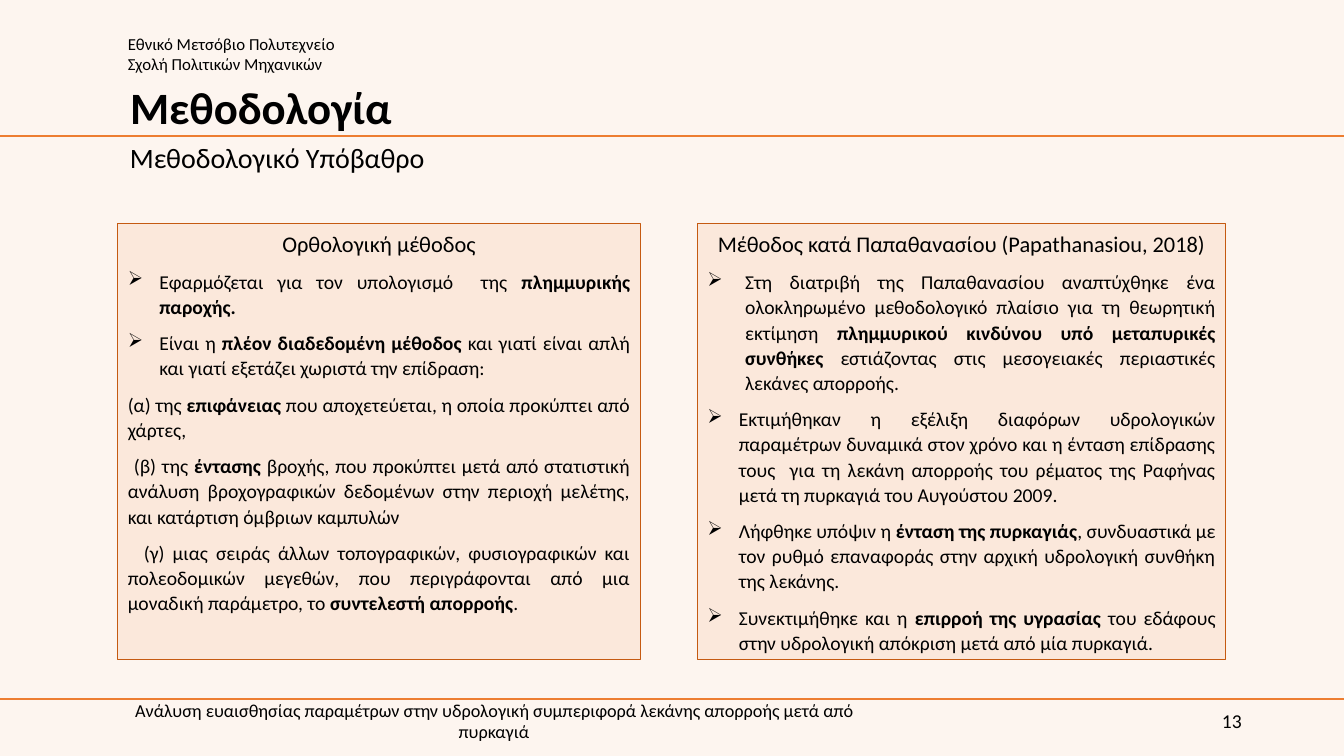
"""Build the methodology slide with its two method panels."""
from dataclasses import dataclass

from lxml.etree import SubElement
from pptx import Presentation
from pptx.dml.color import RGBColor
from pptx.enum.shapes import MSO_CONNECTOR as Connector, MSO_SHAPE as Preset
from pptx.enum.text import MSO_ANCHOR as Anchor, MSO_AUTO_SIZE as AutoSize, PP_ALIGN as Align
from pptx.oxml.ns import qn
from pptx.shapes.base import BaseShape
from pptx.slide import Slide
from pptx.text.text import TextFrame
from pptx.util import Pt

COLORS = {"background": "FDF5EF", "panel": "FBE5D6", "border": "C55A11",
          "rule": "ED7D31", "text": "000000"}
FONT = "Calibri"
SLIDE_WIDTH, SLIDE_HEIGHT = 960, 540
PANEL_OPACITY = 78
RULE_HEIGHTS = (97.2, 499)


@dataclass(frozen=True)
class Box:
    left: float
    top: float
    width: float
    height: float


@dataclass(frozen=True)
class Label:
    box: Box
    lines: tuple[str, ...]
    size: float
    align: Align = Align.LEFT
    anchor: Anchor = Anchor.TOP


@dataclass(frozen=True)
class Item:
    text: str
    bullet: bool = True
    margin: float = 22.5
    indent: float = -22.5


@dataclass(frozen=True)
class Panel:
    box: Box
    heading: str
    items: tuple[Item, ...]


TITLE_BOX = Box(85.7, 43.9, 327.6, 69.1)

LABELS = (
    Label(Box(84.2, 20.2, 311, 36),
          ("Εθνικό Μετσόβιο Πολυτεχνείο", "Σχολή Πολιτικών Μηχανικών"), 12),
    Label(Box(85.7, 96.5, 233.3, 31.7), ("Μεθοδολογικό Υπόβαθρο",), 20),
    Label(Box(64.1, 500.4, 577.4, 28.8),
          ("Ανάλυση ευαισθησίας παραμέτρων στην υδρολογική συμπεριφορά λεκάνης "
           "απορροής μετά από πυρκαγιά",), 13, Align.CENTER, Anchor.MIDDLE),
    Label(Box(678.2, 500.4, 216, 28.8), ("13",), 14, Align.RIGHT, Anchor.MIDDLE),
)

PANELS = (
    Panel(Box(84.2, 159.3, 373, 311.6), "Ορθολογική μέθοδος", (
        Item("Εφαρμόζεται για τον υπολογισμό  της **πλημμυρικής παροχής.**"),
        Item("Είναι η **πλέον διαδεδομένη μέθοδος** και γιατί είναι απλή και γιατί "
             "εξετάζει χωριστά την επίδραση:"),
        Item("(α) της **επιφάνειας** που αποχετεύεται, η οποία προκύπτει από χάρτες,",
             False, 0, 0),
        Item("(β) της **έντασης** βροχής, που προκύπτει μετά από στατιστική ανάλυση "
             "βροχογραφικών δεδομένων στην περιοχή μελέτης, και κατάρτιση όμβριων καμπυλών",
             False, 0, 4.3),
        Item("(γ) μιας σειράς άλλων τοπογραφικών, φυσιογραφικών και πολεοδομικών "
             "μεγεθών, που περιγράφονται από μια μοναδική παράμετρο, το "
             "**συντελεστή απορροής**.", False, 0, 11.5),
    )),
    Panel(Box(498.2, 159.8, 377.3, 311), "Μέθοδος κατά Παπαθανασίου (Papathanasiou, 2018)", (
        Item("Στη διατριβή της Παπαθανασίου αναπτύχθηκε ένα ολοκληρωμένο μεθοδολογικό "
             "πλαίσιο για τη θεωρητική εκτίμηση **πλημμυρικού κινδύνου υπό μεταπυρικές "
             "συνθήκες** εστιάζοντας στις μεσογειακές περιαστικές λεκάνες απορροής.",
             margin=27, indent=-27),
        Item("Εκτιμήθηκαν η εξέλιξη διαφόρων υδρολογικών παραμέτρων δυναμικά στον χρόνο "
             "και η ένταση επίδρασης τους  για τη λεκάνη απορροής του ρέματος της Ραφήνας "
             "μετά τη πυρκαγιά του Αυγούστου 2009."),
        Item("Λήφθηκε υπόψιν η **ένταση της πυρκαγιάς**, συνδυαστικά με τον ρυθμό "
             "επαναφοράς στην αρχική υδρολογική συνθήκη της λεκάνης."),
        Item("Συνεκτιμήθηκε και η **επιρροή της υγρασίας** του εδάφους στην υδρολογική "
             "απόκριση μετά από μία πυρκαγιά."),
    )),
)


def color(name: str) -> RGBColor:
    """Return the named palette colour."""
    return RGBColor.from_string(COLORS[name])


def points(box: Box) -> tuple[Pt, Pt, Pt, Pt]:
    """Return the box as lengths."""
    return Pt(box.left), Pt(box.top), Pt(box.width), Pt(box.height)


def write(frame: TextFrame, text: str, *, size: float, align: Align = Align.LEFT,
          line_spacing: float = 1.0, space_after: float = 0, bullet: bool = False,
          margin: float = 0, indent: float = 0) -> None:
    """Write one paragraph, with bold between double asterisks."""
    first = frame.paragraphs[0]
    paragraph = frame.add_paragraph() if first.runs else first
    properties = paragraph._p.get_or_add_pPr()
    properties.set("marL", str(Pt(margin)))
    properties.set("indent", str(Pt(indent)))
    if bullet:
        SubElement(properties, qn("a:buChar")).set("char", "➢")
    paragraph.alignment = align
    paragraph.line_spacing = line_spacing
    paragraph.space_before = Pt(0)
    paragraph.space_after = Pt(space_after)
    for index, part in enumerate(text.split("**")):
        if part:
            run = paragraph.add_run()
            run.text = part
            run.font.name = FONT
            run.font.size = Pt(size)
            run.font.bold = index % 2 == 1
            run.font.color.rgb = color("text")


def prepare(shape: BaseShape, anchor: Anchor) -> TextFrame:
    """Return the wrapped text frame of the shape."""
    frame = shape.text_frame
    frame.word_wrap = True
    frame.auto_size = AutoSize.NONE
    frame.vertical_anchor = anchor
    return frame


def set_title(slide: Slide) -> None:
    """Place and format the title."""
    title = slide.shapes.title
    title.left, title.top, title.width, title.height = points(TITLE_BOX)
    write(prepare(title, Anchor.MIDDLE), "**Μεθοδολογία**", size=32, line_spacing=0.9)


def add_rule(slide: Slide, height: float) -> None:
    """Draw a rule across the slide."""
    rule = slide.shapes.add_connector(
        Connector.STRAIGHT, Pt(0), Pt(height), Pt(SLIDE_WIDTH), Pt(height))
    rule.line.color.rgb = color("rule")
    rule.line.width = Pt(1.5)
    SubElement(rule._element.spPr, qn("a:effectLst"))


def add_label(slide: Slide, label: Label) -> None:
    """Add a text box."""
    frame = prepare(slide.shapes.add_textbox(*points(label.box)), label.anchor)
    for line in label.lines:
        write(frame, line, size=label.size, align=label.align)


def add_panel(slide: Slide, panel: Panel) -> None:
    """Add a framed panel with a heading and its items."""
    shape = slide.shapes.add_shape(Preset.RECTANGLE, *points(panel.box))
    shape.shadow.inherit = False
    shape.fill.solid()
    shape.fill.fore_color.rgb = color("panel")
    fill_color = shape._element.spPr.find(qn("a:solidFill")).find(qn("a:srgbClr"))
    SubElement(fill_color, qn("a:alpha")).set("val", str(PANEL_OPACITY * 1000))
    shape.line.color.rgb = color("border")
    shape.line.width = Pt(0.75)
    frame = prepare(shape, Anchor.TOP)
    write(frame, panel.heading, size=16, align=Align.CENTER, line_spacing=1.07, space_after=8)
    for item in panel.items:
        write(frame, item.text, size=14, align=Align.JUSTIFY, line_spacing=1.07, space_after=8,
              bullet=item.bullet, margin=item.margin, indent=item.indent)


def main() -> None:
    """Build and save the presentation."""
    presentation = Presentation()
    presentation.slide_width = Pt(SLIDE_WIDTH)
    presentation.slide_height = Pt(SLIDE_HEIGHT)
    slide = presentation.slides.add_slide(presentation.slide_layouts.get_by_name("Title Only"))
    slide.background.fill.solid()
    slide.background.fill.fore_color.rgb = color("background")
    set_title(slide)
    for height in RULE_HEIGHTS:
        add_rule(slide, height)
    for label in LABELS:
        add_label(slide, label)
    for panel in PANELS:
        add_panel(slide, panel)
    presentation.save("out.pptx")


if __name__ == "__main__":
    main()
